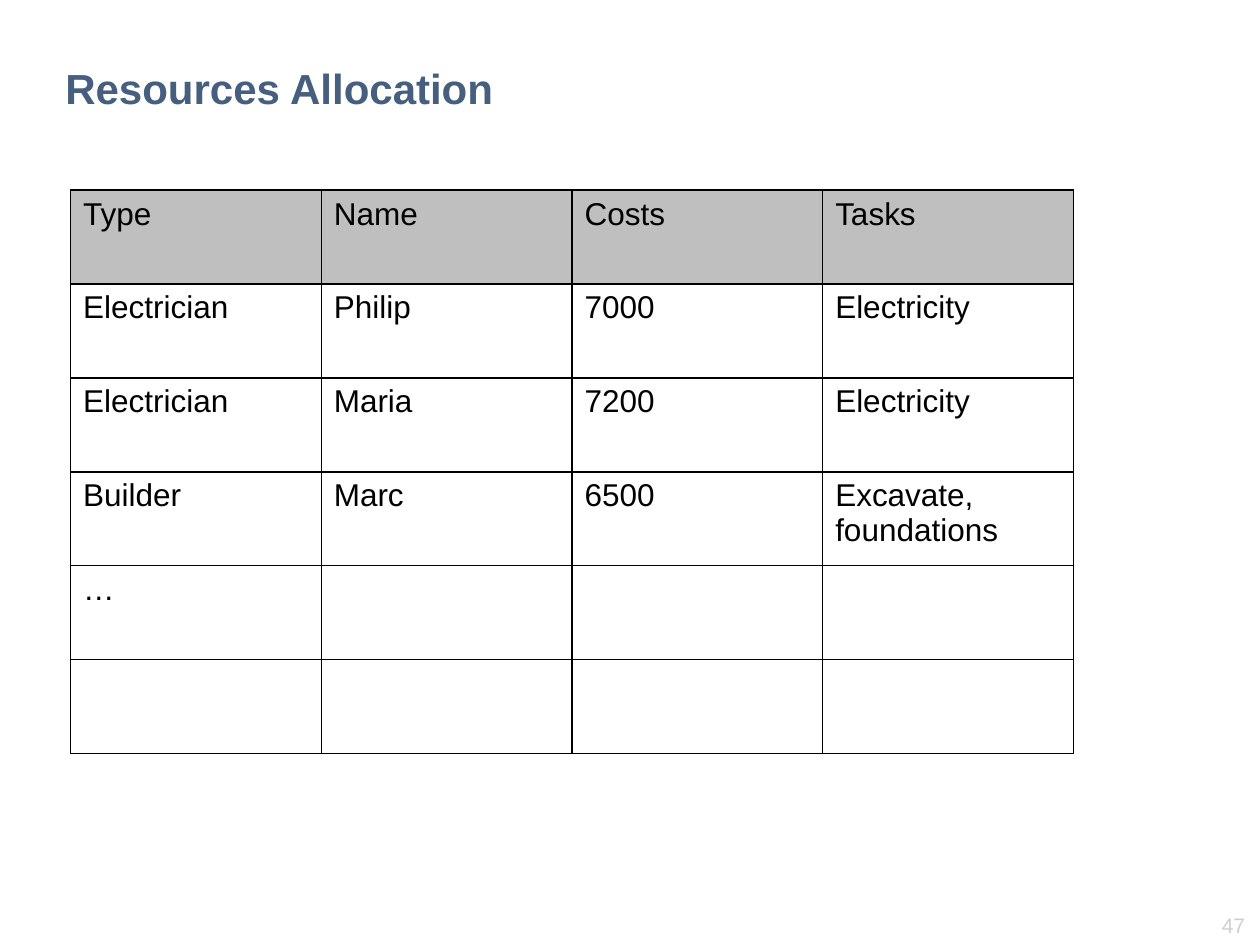
from dataclasses import dataclass

from lxml.etree import SubElement
from pptx import Presentation
from pptx.dml.color import RGBColor
from pptx.enum.text import MSO_ANCHOR, PP_ALIGN
from pptx.oxml.ns import qn
from pptx.util import Inches, Pt

TITLE = "Resources Allocation"
PAGE_NUMBER = "47"
ROWS = [
    ("Type", "Name", "Costs", "Tasks"),
    ("Electrician", "Philip", "7000", "Electricity"),
    ("Electrician", "Maria", "7200", "Electricity"),
    ("Builder", "Marc", "6500", "Excavate, foundations"),
    ("…", "", "", ""),
    ("", "", "", ""),
]


@dataclass(frozen=True)
class Theme:
    font: str = "Arial"
    title_color: str = "465F7F"
    number_color: str = "D0CECE"
    text_color: str = "000000"
    border_color: str = "000000"
    header_fill: str = "BFBFBF"
    title_size: int = 24
    table_size: int = 18
    number_size: int = 12
    border_width: int = 1


THEME = Theme()
TABLE_LEFT, TABLE_TOP = 0.56, 1.51
COLUMN_WIDTH, ROW_HEIGHT = 1.99, 0.745


def style_font(font, size, color, bold=False):
    font.name = THEME.font
    font.size = Pt(size)
    font.bold = bold
    font.color.rgb = RGBColor.from_string(color)


def add_label(slide, box, text, size, color, bold=False,
              align=PP_ALIGN.LEFT, anchor=MSO_ANCHOR.TOP):
    text_frame = slide.shapes.add_textbox(*map(Inches, box)).text_frame
    text_frame.word_wrap = True
    text_frame.vertical_anchor = anchor
    text_frame.text = text
    paragraph = text_frame.paragraphs[0]
    paragraph.alignment = align
    style_font(paragraph.runs[0].font, size, color, bold)


def add_borders(cell):
    """Draw all four sides; borders must come before the fill in the XML."""
    properties = cell._tc.get_or_add_tcPr()
    for side in ("lnL", "lnR", "lnT", "lnB"):
        line = SubElement(properties, qn(f"a:{side}"), w=str(Pt(THEME.border_width)))
        fill = SubElement(line, qn("a:solidFill"))
        SubElement(fill, qn("a:srgbClr"), val=THEME.border_color)


def add_resource_table(slide):
    row_count, column_count = len(ROWS), len(ROWS[0])
    table = slide.shapes.add_table(
        row_count, column_count, Inches(TABLE_LEFT), Inches(TABLE_TOP),
        Inches(COLUMN_WIDTH * column_count), Inches(ROW_HEIGHT * row_count),
    ).table
    table.horz_banding = False
    for row_index, values in enumerate(ROWS):
        for column_index, value in enumerate(values):
            cell = table.cell(row_index, column_index)
            cell.text = value
            style_font(cell.text_frame.paragraphs[0].font,
                       THEME.table_size, THEME.text_color)
            for run in cell.text_frame.paragraphs[0].runs:
                style_font(run.font, THEME.table_size, THEME.text_color)
            add_borders(cell)
            if row_index == 0:
                cell.fill.solid()
                cell.fill.fore_color.rgb = RGBColor.from_string(THEME.header_fill)
            else:
                cell.fill.background()


def main():
    presentation = Presentation()
    presentation.slide_width, presentation.slide_height = Inches(10), Inches(7.5)
    slide = presentation.slides.add_slide(presentation.slide_layouts[6])
    add_label(slide, (9.16, 7.19, 0.82, 0.3), PAGE_NUMBER, THEME.number_size,
              THEME.number_color, align=PP_ALIGN.RIGHT)
    add_label(slide, (0.42, 0.32, 7.77, 0.75), TITLE, THEME.title_size,
              THEME.title_color, bold=True, anchor=MSO_ANCHOR.MIDDLE)
    add_resource_table(slide)
    presentation.save("out.pptx")


if __name__ == "__main__":
    main()
